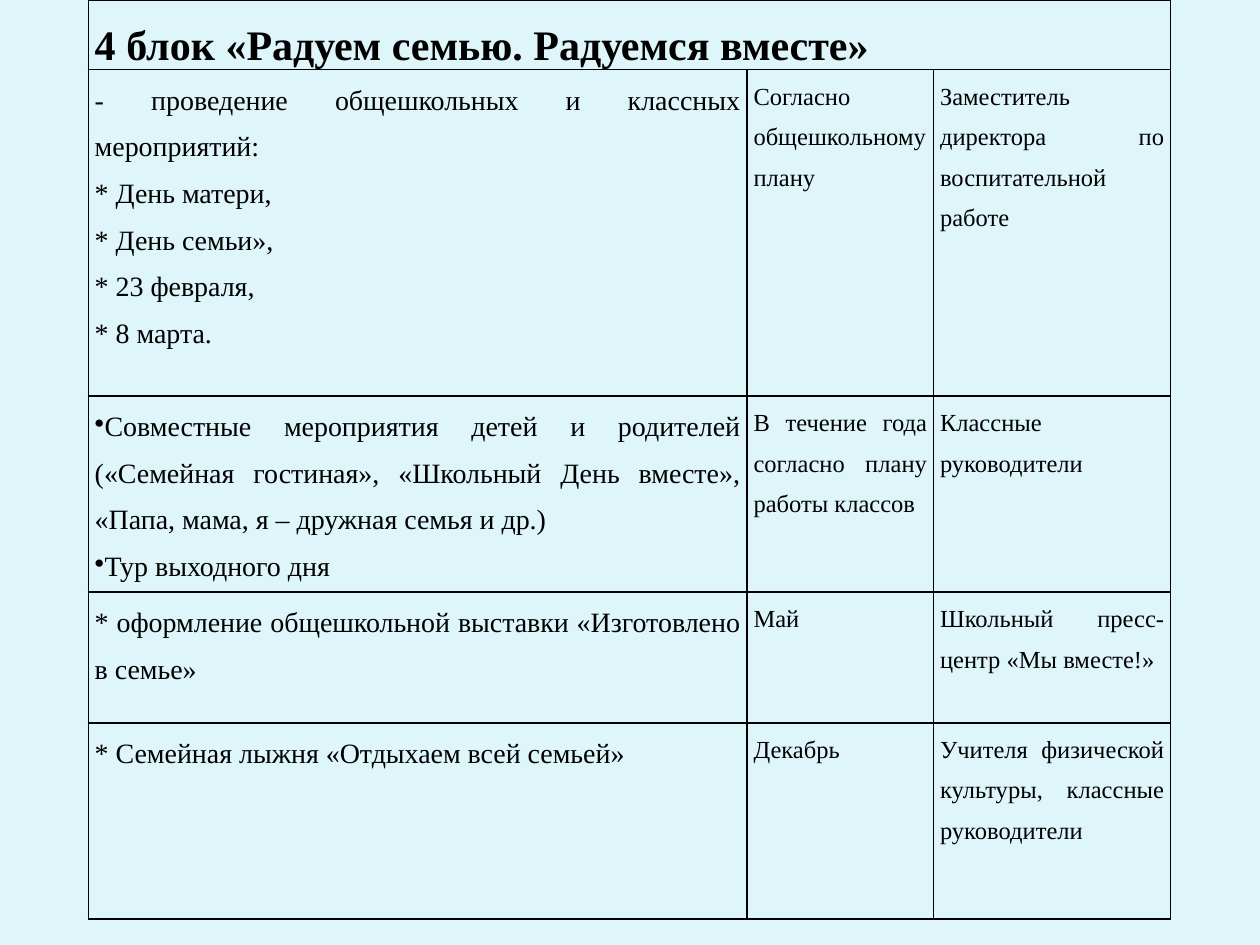
import pptx
import pptx.dml.color
import pptx.enum.text
import pptx.oxml
import pptx.oxml.ns
import pptx.util

Cm = pptx.util.Cm
Pt = pptx.util.Pt

COLORS = {"background": "DEF5FA", "ink": "000000"}
FONT = "Times New Roman"
BULLET = "•"
TITLE = "4 блок «Радуем семью. Радуемся вместе»"
COLUMN_WIDTHS = (13.28, 3.76, 4.78)
ROW_HEIGHTS = (1.32, 6.58, 3.95, 2.64, 3.95)
COLUMN_SIZES = (16, 14, 14)
EVENTS = (
    (
        (
            "- проведение общешкольных и классных мероприятий:",
            "* День матери,",
            "* День семьи»,",
            "* 23 февраля,",
            "* 8 марта.",
        ),
        ("Согласно общешкольному плану",),
        ("Заместитель директора по воспитательной работе",),
    ),
    (
        (
            "•Совместные мероприятия детей и родителей («Семейная гостиная», "
            "«Школьный День вместе», «Папа, мама, я – дружная семья и др.)",
            "•Тур выходного дня",
        ),
        ("В течение года согласно плану работы классов",),
        ("Классные руководители",),
    ),
    (
        ("* оформление общешкольной выставки «Изготовлено в семье»",),
        ("Май",),
        ("Школьный пресс-центр «Мы вместе!»",),
    ),
    (
        ("* Семейная лыжня «Отдыхаем всей семьей»",),
        ("Декабрь",),
        ("Учителя физической культуры, классные руководители",),
    ),
)
CELL_FORMAT = {
    "margin_left": Cm(0.13),
    "margin_right": Cm(0.13),
    "margin_top": 0,
    "margin_bottom": 0,
    "vertical_anchor": pptx.enum.text.MSO_ANCHOR.TOP,
}
PARAGRAPH_FORMAT = {
    "alignment": pptx.enum.text.PP_ALIGN.JUSTIFY,
    "line_spacing": 1.5,
}


def apply_format(target, values):
    """Set each attribute of the target from a dict."""
    for name, value in values.items():
        setattr(target, name, value)


def rgb(name):
    """Return the named colour."""
    return pptx.dml.color.RGBColor.from_string(COLORS[name])


def add_borders(cell):
    """Draw a thin line on all four sides of a cell."""
    properties = cell._tc.get_or_add_tcPr()
    for index, side in enumerate(("lnL", "lnR", "lnT", "lnB")):
        border = pptx.oxml.parse_xml(
            f'<a:{side} {pptx.oxml.ns.nsdecls("a")} w="{Pt(1)}"><a:solidFill>'
            f'<a:srgbClr val="{COLORS["ink"]}"/></a:solidFill></a:{side}>'
        )
        properties.insert(index, border)


def add_bullet(paragraph):
    """Give a paragraph a bullet without an indent."""
    properties = paragraph._p.get_or_add_pPr()
    apply_format(paragraph, {"level": 0})
    properties.set("marL", "0")
    properties.set("indent", "0")
    properties.append(
        pptx.oxml.parse_xml(
            f'<a:buChar {pptx.oxml.ns.nsdecls("a")} char="{BULLET}"/>'
        )
    )


def style_cell(cell):
    """Set the margins, fill and borders of a cell."""
    apply_format(cell, CELL_FORMAT)
    cell.fill.solid()
    cell.fill.fore_color.rgb = rgb("background")
    add_borders(cell)


def write_cell(cell, lines, size, bold=False):
    """Write one paragraph for each line of text."""
    frame = cell.text_frame
    for index, line in enumerate(lines):
        paragraph = frame.add_paragraph() if index else frame.paragraphs[0]
        apply_format(paragraph, PARAGRAPH_FORMAT)
        if line.startswith(BULLET):
            add_bullet(paragraph)
        run = paragraph.add_run()
        run.text = line.removeprefix(BULLET)
        apply_format(run.font, {"name": FONT, "size": Pt(size), "bold": bold})
        run.font.color.rgb = rgb("ink")


def add_plan_table(slide, left, top, width, height):
    """Place the plan of events in the given box."""
    table = slide.shapes.add_table(
        len(ROW_HEIGHTS), len(COLUMN_WIDTHS), left, top, width, height
    ).table
    apply_format(table, {"first_row": False, "horz_banding": False})
    for column, share in zip(table.columns, COLUMN_WIDTHS):
        column.width = int(width * share / sum(COLUMN_WIDTHS))
    for row, share in zip(table.rows, ROW_HEIGHTS):
        row.height = int(height * share / sum(ROW_HEIGHTS))
    for cell in table.iter_cells():
        style_cell(cell)
    table.cell(0, 0).merge(table.cell(0, len(COLUMN_WIDTHS) - 1))
    write_cell(table.cell(0, 0), (TITLE,), 24, bold=True)
    for row_index, event in enumerate(EVENTS, start=1):
        for column_index, lines in enumerate(event):
            cell = table.cell(row_index, column_index)
            write_cell(cell, lines, COLUMN_SIZES[column_index])


def main():
    """Build and save the presentation."""
    presentation = pptx.Presentation()
    apply_format(
        presentation, {"slide_width": Cm(25.4), "slide_height": Cm(19.05)}
    )
    slide = presentation.slides.add_slide(presentation.slide_layouts[6])
    slide.background.fill.solid()
    slide.background.fill.fore_color.rgb = rgb("background")
    add_plan_table(
        slide, Cm(1.78), 0, Cm(sum(COLUMN_WIDTHS)), Cm(sum(ROW_HEIGHTS))
    )
    presentation.save("out.pptx")


if __name__ == "__main__":
    main()
